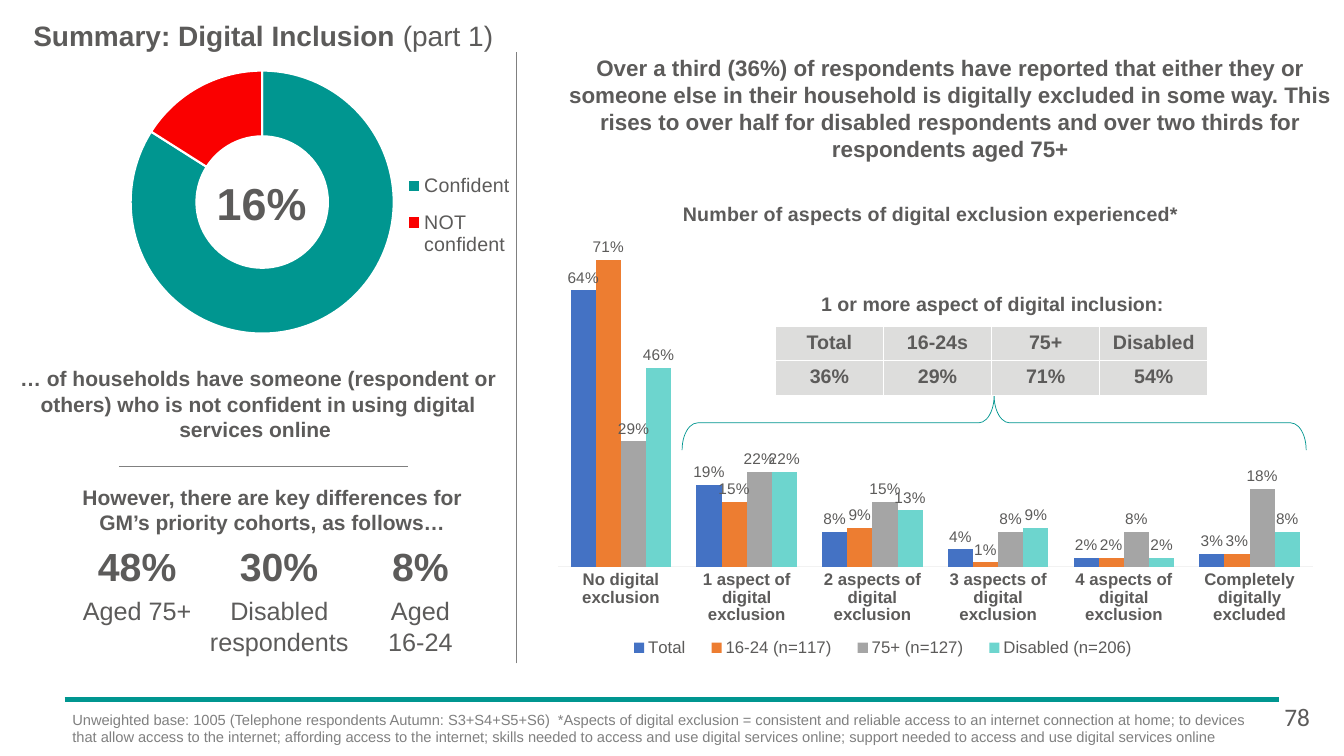
"""Builds the digital inclusion summary slide."""
from lxml import etree
from pptx import Presentation
from pptx.chart.data import CategoryChartData
from pptx.dml.color import RGBColor
from pptx.enum import chart as ce, shapes, text
from pptx.oxml import ns
from pptx.util import Inches, Pt

INK = RGBColor(0x5C, 0x5B, 0x5A)
GREY = RGBColor(0x80, 0x80, 0x80)
TEAL = RGBColor(0x00, 0x96, 0x90)
RED = RGBColor(0xFA, 0x00, 0x00)
BLUE = RGBColor(0x44, 0x72, 0xC4)
AMBER = RGBColor(0xED, 0x7D, 0x31)
SILVER = RGBColor(0xA5, 0xA5, 0xA5)
AQUA = RGBColor(0x6D, 0xD5, 0xCE)
PALE = RGBColor(0xF2, 0xF2, 0xF2)
CELL = RGBColor(0xDD, 0xDD, 0xDC)
WHITE = RGBColor(0xFF, 0xFF, 0xFF)
MID, LEFT = text.PP_ALIGN.CENTER, text.PP_ALIGN.LEFT


def style(font, size, bold=False, color=INK, name="Arial"):
    font.size, font.bold, font.name = Pt(size), bold, name
    font.color.rgb = color


def write(box, words, size, bold=True, align=MID, color=INK, name="Arial", pad=True):
    shape = slide.shapes.add_textbox(*map(Inches, box))
    frame = shape.text_frame
    frame.word_wrap = True
    if not pad:
        frame.margin_left = frame.margin_right = 0
        frame.margin_top = frame.margin_bottom = 0
    para = frame.paragraphs[0]
    para.alignment = align
    run = para.add_run()
    run.text = words
    style(run.font, size, bold, color, name)
    return frame


deck = Presentation()
deck.slide_width, deck.slide_height = Inches(13.33), Inches(7.5)
slide = deck.slides.add_slide(deck.slide_layouts[5])

title = slide.shapes.title
title.left, title.top = Inches(0.33), Inches(0.18)
title.width, title.height = Inches(11.5), Inches(0.34)
frame = title.text_frame
frame.margin_left = frame.margin_right = frame.margin_top = frame.margin_bottom = 0
frame.vertical_anchor = text.MSO_ANCHOR.MIDDLE
frame.paragraphs[0].alignment = LEFT
for words, bold in (("Summary: Digital Inclusion ", True), ("(part 1)", False)):
    run = frame.paragraphs[0].add_run()
    run.text = words
    style(run.font, 20, bold)

for x1, y1, x2, y2, color, width in (
    (0.64, 6.94, 12.69, 6.94, TEAL, 3),
    (1.18, 4.63, 4.05, 4.63, GREY, 0.5),
    (5.12, 6.58, 5.12, 0.52, GREY, 0.5),
):
    rule = slide.shapes.add_connector(
        shapes.MSO_CONNECTOR.STRAIGHT, *map(Inches, (x1, y1, x2, y2)))
    rule.line.color.rgb, rule.line.width = color, Pt(width)
    etree.SubElement(rule._element.spPr, ns.qn("a:effectLst"))

data = CategoryChartData()
data.categories = ["Confident", "NOT confident"]
data.add_series("Series 1", (84, 16))
ring = slide.shapes.add_chart(
    ce.XL_CHART_TYPE.DOUGHNUT, *map(Inches, (0.79, 0.63, 4.4, 2.74)), data).chart
ring.has_title = False
for i, color in enumerate((TEAL, RED)):
    part = ring.plots[0].series[0].points[i].format
    part.fill.solid()
    part.fill.fore_color.rgb = color
    part.line.color.rgb, part.line.width = WHITE, Pt(1.5)
ring._chartSpace.find(".//" + ns.qn("c:holeSize")).set("val", "55")

write((2.15, 1.74, 0.9, 0.54), "16%", 32, align=LEFT, pad=False).word_wrap = False
write((0.1, 3.63, 4.92, 0.76), "… of households have someone (respondent or others) "
      "who is not confident in using digital services online ", 15, pad=False)
write((0.5, 4.76, 4.4, 0.61), "However, there are key differences for "
      "GM’s priority cohorts, as follows…", 15)
for x, share, align, left, width, group in (
    (0.84, "48%", MID, 0.61, 1.5, "Aged 75+"),
    (2.28, "30%", LEFT, 1.96, 1.62, "Disabled respondents"),
    (3.65, "8%", MID, 3.65, 1.04, "Aged 16-24"),
):
    write((x, 5.33, 1.04, 0.57), share, 28, align=align)
    write((left, 5.86, width, 0.71), group, 18, False)

write((5.51, 0.49, 7.83, 1.18), "Over a third (36%) of respondents have reported that "
      "either they or someone else in their household is digitally excluded in some way. "
      "This rises to over half for disabled respondents and over two thirds for "
      "respondents aged 75+", 16)

data = CategoryChartData(number_format="0%")
data.categories = (["No digital exclusion", "1 aspect of digital exclusion"]
                   + [f"{n} aspects of digital exclusion" for n in (2, 3, 4)]
                   + ["Completely digitally excluded"])
groups = (
    ("Total", (0.64, 0.19, 0.08, 0.04, 0.02, 0.03), BLUE),
    ("16-24 (n=117)", (0.71, 0.15, 0.09, 0.01, 0.02, 0.03), AMBER),
    ("75+ (n=127)", (0.29, 0.22, 0.15, 0.08, 0.08, 0.18), SILVER),
    ("Disabled (n=206)", (0.46, 0.22, 0.13, 0.09, 0.02, 0.08), AQUA),
)
for name, values, color in groups:
    data.add_series(name, values)
bars = slide.shapes.add_chart(
    ce.XL_CHART_TYPE.COLUMN_CLUSTERED, *map(Inches, (5.3, 1.81, 7.86, 4.76)), data).chart
style(bars.font, 14)
head = bars.chart_title.text_frame.paragraphs[0].add_run()
head.text = "Number of aspects of digital exclusion experienced*"
style(head.font, 14, True)
plot = bars.plots[0]
plot.gap_width, plot.overlap, plot.vary_by_categories = 100, 0, False
for series, (name, values, color) in zip(plot.series, groups):
    series.format.fill.solid()
    series.format.fill.fore_color.rgb = color
    labels = series.data_labels
    labels.show_value = True
    labels.position = ce.XL_LABEL_POSITION.OUTSIDE_END
    labels.number_format, labels.number_format_is_linked = "0%", False
    style(labels.font, 11)
axis = bars.category_axis
axis.major_tick_mark = ce.XL_TICK_MARK.NONE
axis.format.line.color.rgb, axis.format.line.width = PALE, Pt(0.75)
style(axis.tick_labels.font, 12, True)
axis = bars.value_axis
axis.minimum_scale, axis.maximum_scale = 0, 0.8
axis.has_major_gridlines = axis.visible = False

for chart, side, size, area, key in (
    (ring, ce.XL_LEGEND_POSITION.RIGHT, 14,
     (0.115, 0.025, 0.593, 0.954), (0.72, 0.35, 0.27, 0.4)),
    (bars, ce.XL_LEGEND_POSITION.BOTTOM, 12,
     (0.03, 0.081, 0.952, 0.72), (0.1, 0.94, 0.68, 0.06)),
):
    chart.has_legend = True
    chart.legend.position, chart.legend.include_in_layout = side, False
    style(chart.legend.font, size)
    for tag, spot, inner, place in (("c:plotArea", 0, ("inner",), area),
                                    ("c:legend", 1, (), key)):
        zone = chart._chartSpace.find(".//" + ns.qn(tag))
        for old in zone.findall(ns.qn("c:layout")):
            zone.remove(old)
        layout = etree.Element(ns.qn("c:layout"))
        zone.insert(spot, layout)
        manual = etree.SubElement(layout, ns.qn("c:manualLayout"))
        names = ("layoutTarget",) * len(inner) + ("xMode", "yMode", "x", "y", "w", "h")
        for name, value in zip(names, inner + ("edge", "edge") + place):
            etree.SubElement(manual, ns.qn("c:" + name)).set("val", str(value))

brace = slide.shapes.add_shape(
    shapes.MSO_SHAPE.RIGHT_BRACE, *map(Inches, (9.59, 1.1, 0.54, 6.19)))
brace.rotation = 270
brace.adjustments[0], brace.adjustments[1] = 0.285, 0.5
brace.shadow.inherit = False
brace.fill.background()
brace.line.color.rgb, brace.line.width = TEAL, Pt(0.5)

write((7.42, 2.85, 4.85, 0.34), "1 or more aspect of digital inclusion:", 14)
rows = (("Total", "16-24s", "75+", "Disabled"), ("36%", "29%", "71%", "54%"))
table = slide.shapes.add_table(2, 4, *map(Inches, (7.69, 3.24, 4.29, 0.68))).table
for r, row in enumerate(rows):
    for c, words in enumerate(row):
        cell = table.cell(r, c)
        cell.fill.solid()
        cell.fill.fore_color.rgb = CELL
        para = cell.text_frame.paragraphs[0]
        para.alignment = MID
        run = para.add_run()
        run.text = words
        style(run.font, 14, True)

write((0.62, 7, 12.01, 0.66), "Unweighted base: 1005 (Telephone respondents Autumn: "
      "S3+S4+S5+S6)  *Aspects of digital exclusion = consistent and reliable access to an "
      "internet connection at home; to devices that allow access to the internet; affording "
      "access to the internet; skills needed to access and use digital services online; "
      "support needed to access and use digital services online", 10.5, False, LEFT, GREY)
write((12.64, 6.91, 0.53, 0.4), "78", 18, False, LEFT, name="Calibri")

deck.save("out.pptx")
